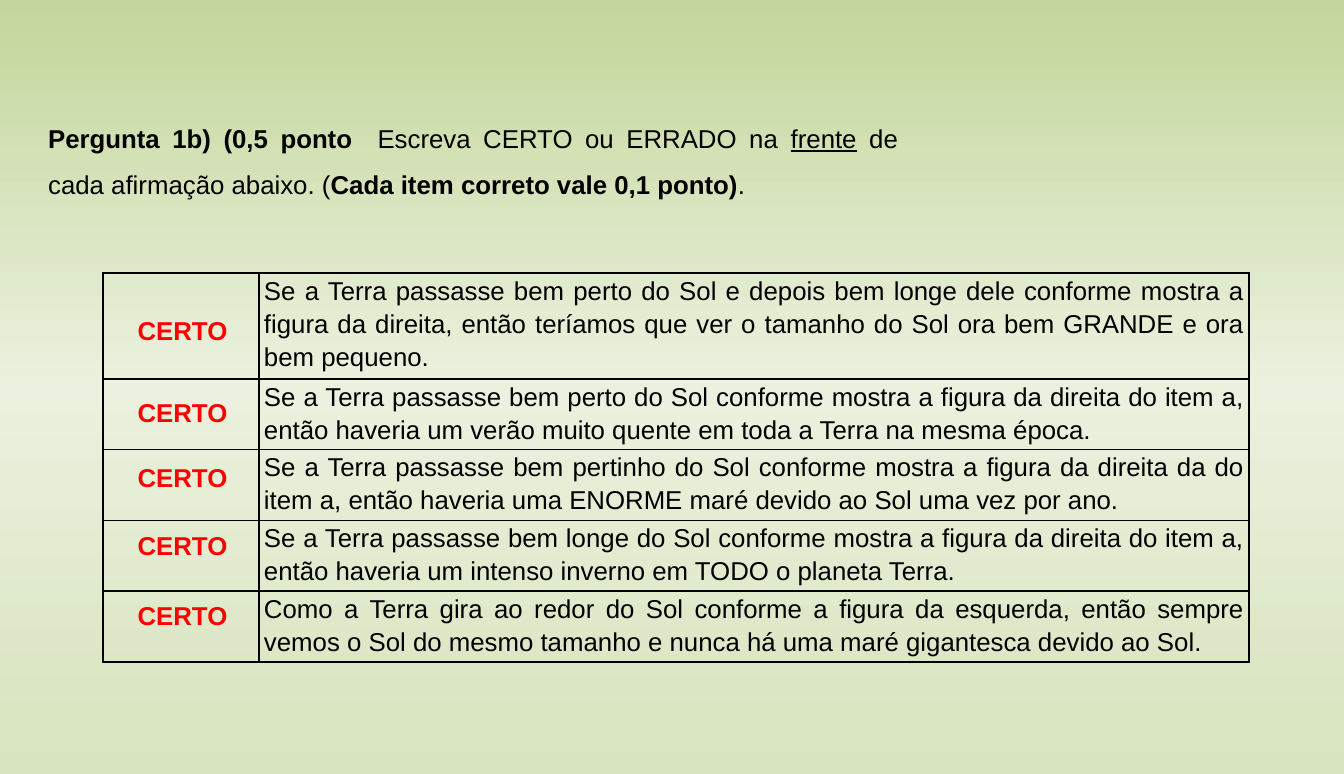
from copy import deepcopy

from lxml.etree import SubElement
from pptx import Presentation
from pptx.dml.color import RGBColor
from pptx.enum.text import MSO_AUTO_SIZE as AutoSize, PP_ALIGN as Align
from pptx.oxml.ns import qn
from pptx.util import Pt

COLORS = {
    "text": "000000", "answer": "FF0000", "border": "000000",
    "top": "C3D69B", "middle": "EBF1DE", "bottom": "D7E4BD",
}
BACKGROUND = [("top", 0), ("middle", 0.5), ("bottom", 1)]

QUESTION = [
    ("Pergunta 1b) (0,5 ponto ", {"bold": True}),
    (" Escreva CERTO ou ERRADO na ", {}),
    ("frente", {"underline": True}),
    (" de cada afirmação abaixo. (", {}),
    ("Cada item correto vale 0,1 ponto)", {"bold": True}),
    (".", {}),
]
# answer, top of the answer, row height, statement
ITEMS = [
    ("CERTO", 305, 106, "Se a Terra passasse bem perto do Sol e depois bem longe dele "
     "conforme mostra a figura da direita, então teríamos que ver o tamanho do Sol "
     "ora bem GRANDE e ora bem pequeno."),
    ("CERTO", 387, 70, "Se a Terra passasse bem perto do Sol conforme mostra a figura da "
     "direita do item a, então haveria um verão muito quente em toda a Terra na mesma época."),
    ("CERTO", 452, 71, "Se a Terra passasse bem pertinho do Sol conforme mostra a figura da "
     "direita da do item a, então haveria uma ENORME maré devido ao Sol uma vez por ano."),
    ("CERTO", 520, 70, "Se a Terra passasse bem longe do Sol conforme mostra a figura da "
     "direita do item a, então haveria um intenso inverno em TODO o planeta Terra."),
    ("CERTO", 590, 71, "Como a Terra gira ao redor do Sol conforme a figura da esquerda, "
     "então sempre vemos o Sol do mesmo tamanho e nunca há uma maré gigantesca devido ao Sol."),
]
QUESTION_BOX = (38, 102, 870, 104)
TABLE_LEFT, TABLE_TOP = 103, 273
COLUMNS = (156, 990)
ANSWER_LEFT, ANSWER_WIDTH, ANSWER_HEIGHT = 127, 111, 46


def px(length):
    return round(length * 914400 / 103.2)


def write(frame, spans, align=Align.JUSTIFY, spacing=1.14, color="text"):
    """Fill the first paragraph of a frame with (text, format) spans."""
    para = frame.paragraphs[0]
    para.alignment = align
    para.line_spacing = spacing
    for text, style in spans:
        span = para.add_run()
        span.text = text
        font = span.font
        font.name, font.size = "Arial", Pt(18)
        font.bold = style.get("bold", False)
        font.underline = style.get("underline", False)
        font.color.rgb = RGBColor.from_string(COLORS[color])


def add_text(page, place, spans, wrap=True, **style):
    box = page.shapes.add_textbox(*map(px, place))
    box.text_frame.word_wrap = wrap
    box.text_frame.auto_size = AutoSize.SHAPE_TO_FIT_TEXT
    write(box.text_frame, spans, **style)


def paint_background(page):
    fill = page.background.fill
    fill.gradient()
    fill.gradient_angle = 270
    stops = page.element.find(".//" + qn("a:gsLst"))
    stops.append(deepcopy(stops[-1]))
    for stop, (name, position) in zip(fill.gradient_stops, BACKGROUND):
        stop.color.rgb = RGBColor.from_string(COLORS[name])
        stop.position = position


def outline(cell):
    props = cell._tc.get_or_add_tcPr()
    for side in ("a:lnL", "a:lnR", "a:lnT", "a:lnB"):
        line = SubElement(props, qn(side), w=str(Pt(1)))
        SubElement(SubElement(line, qn("a:solidFill")), qn("a:srgbClr"), val=COLORS["border"])
    cell.fill.background()


def add_statements(page):
    height = sum(item[2] for item in ITEMS)
    place = (TABLE_LEFT, TABLE_TOP, sum(COLUMNS), height)
    table = page.shapes.add_table(len(ITEMS), len(COLUMNS), *map(px, place)).table
    table.first_row = table.horz_banding = False
    for column, width in zip(table.columns, COLUMNS):
        column.width = px(width)
    for row, (_, _, row_height, statement) in zip(table.rows, ITEMS):
        row.height = px(row_height)
        for cell in row.cells:
            outline(cell)
        cell = row.cells[1]
        cell.margin_left = cell.margin_right = px(5)
        cell.margin_top = cell.margin_bottom = 0
        write(cell.text_frame, [(statement, {})])


def main():
    deck = Presentation()
    deck.slide_width, deck.slide_height = px(1344), px(774)
    page = deck.slides.add_slide(deck.slide_layouts[6])
    paint_background(page)
    add_text(page, QUESTION_BOX, QUESTION, spacing=1.5)
    add_statements(page)
    for answer, top, _, _ in ITEMS:
        add_text(page, (ANSWER_LEFT, top, ANSWER_WIDTH, ANSWER_HEIGHT),
                 [(answer, {"bold": True})], wrap=False, align=Align.CENTER, color="answer")
    deck.save("out.pptx")


if __name__ == "__main__":
    main()
